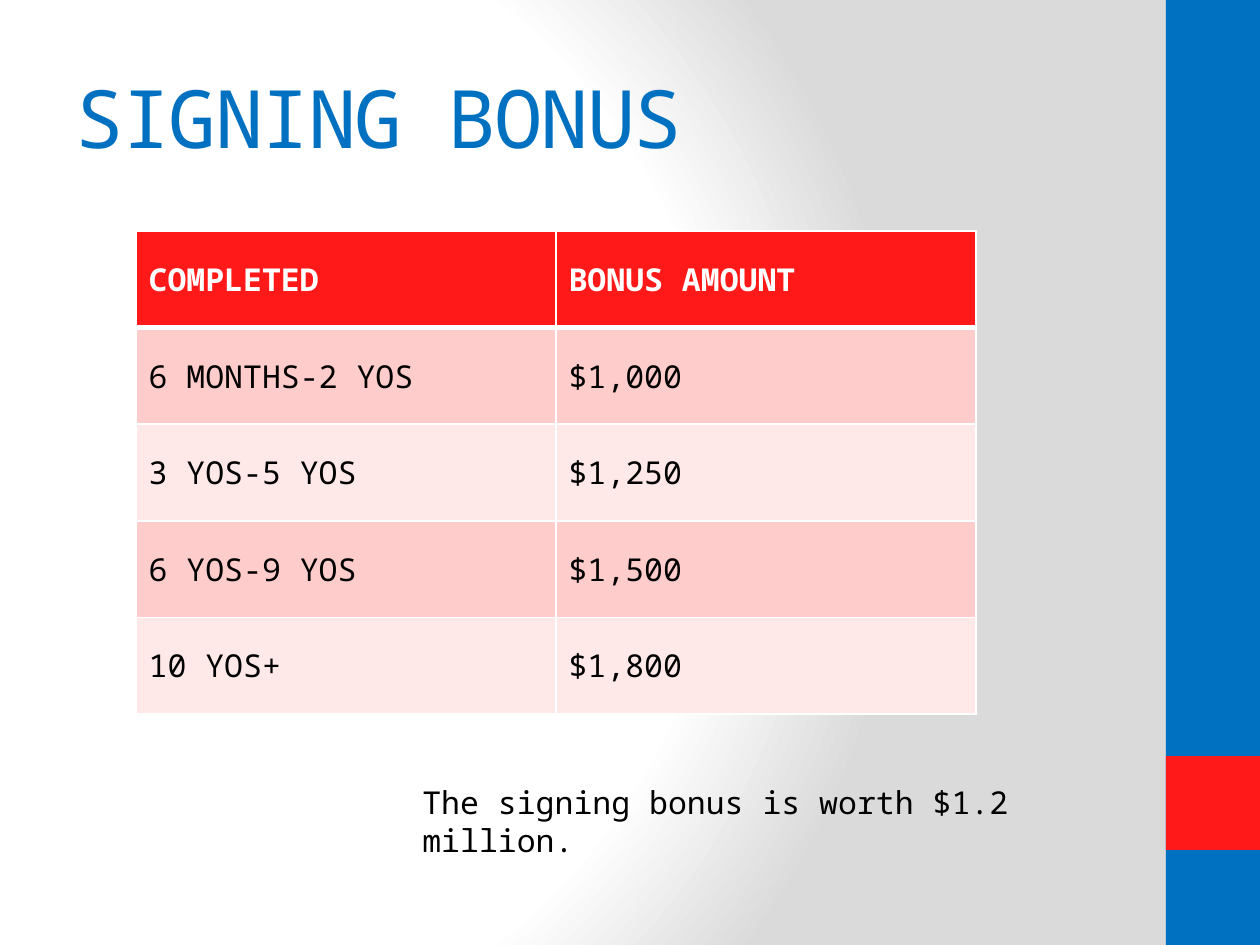
import pptx
import pptx.dml.color
import pptx.enum.shapes
import pptx.enum.text
import pptx.oxml
import pptx.oxml.ns
import pptx.util

PX = 914400 / 126
FONT = "Noto Sans Mono"
BLUE, RED, WHITE, BLACK = "0070C0", "FF1919", "FFFFFF", "000000"
BANDS = ["FFCCCC", "FFE8E8"]
NS = pptx.oxml.ns.nsdecls("a", "p")


def box(*lengths):
    """Turn px lengths into EMU."""
    return [round(n * PX) for n in lengths]


def add_run(p, text, size, color, bold=False):
    r = p.add_run()
    r.text = text
    r.font.name = FONT
    r.font.size = pptx.util.Pt(size)
    r.font.bold = bold
    r.font.color.rgb = pptx.dml.color.RGBColor.from_string(color)
    return r


prs = pptx.Presentation()
prs.slide_width, prs.slide_height = box(1260, 945)
s = prs.slides.add_slide(prs.slide_layouts[5])

# Background: circular gradient from white to grey
stops = "".join(
    f'<a:gs pos="{pos}000"><a:srgbClr val="{color}"/></a:gs>'
    for pos, color in [(0, WHITE), (75, WHITE), (100, "DADADA")]
)
bg = pptx.oxml.parse_xml(
    f'<p:bg {NS}><p:bgPr><a:gradFill rotWithShape="1"><a:gsLst>{stops}</a:gsLst>'
    '<a:path path="circle"><a:fillToRect l="20000" t="50000" r="100000" b="50000"/>'
    "</a:path></a:gradFill><a:effectLst/></p:bgPr></p:bg>"
)
s.element.cSld.insert(0, bg)

# Title
title = s.shapes.title
title.left, title.top, title.width, title.height = box(63, 38, 1050, 157)
tf = title.text_frame
tf.vertical_anchor = pptx.enum.text.MSO_ANCHOR.MIDDLE
p = tf.paragraphs[0]
p.alignment = pptx.enum.text.PP_ALIGN.LEFT
r = add_run(p, "SIGNING BONUS", 46, BLUE)
r.font._element.set("spc", "-100")

# Side bar with accent square
for top, height, color in [(0, 945, BLUE), (756, 94, RED)]:
    sp = s.shapes.add_shape(
        pptx.enum.shapes.MSO_SHAPE.RECTANGLE, *box(1166, top, 94, height)
    )
    sp.shadow.inherit = False
    sp.fill.solid()
    sp.fill.fore_color.rgb = pptx.dml.color.RGBColor.from_string(color)
    sp.line.fill.background()

# Bonus table
rows = [
    ("COMPLETED", "BONUS AMOUNT"),
    ("6 MONTHS-2 YOS", "$1,000"),
    ("3 YOS-5 YOS", "$1,250"),
    ("6 YOS-9 YOS", "$1,500"),
    ("10 YOS+", "$1,800"),
]
table = s.shapes.add_table(len(rows), 2, *box(136, 231, 840, 483)).table
for i, row in enumerate(rows):
    header = i == 0
    for j, text in enumerate(row):
        cell = table.cell(i, j)
        cell.vertical_anchor = pptx.enum.text.MSO_ANCHOR.MIDDLE
        cell.fill.solid()
        cell.fill.fore_color.rgb = pptx.dml.color.RGBColor.from_string(
            RED if header else BANDS[(i - 1) % 2]
        )
        add_run(cell.text_frame.paragraphs[0], text, 18,
                WHITE if header else BLACK, header)
        tcPr = cell._tc.get_or_add_tcPr()
        for k, side in enumerate(["lnL", "lnR", "lnT", "lnB"]):
            thick = (i, side) in [(0, "lnB"), (1, "lnT")]
            width = pptx.util.Pt(3 if thick else 1)
            tcPr.insert(k, pptx.oxml.parse_xml(
                f'<a:{side} {NS} w="{width}"><a:solidFill>'
                f'<a:srgbClr val="{WHITE}"/></a:solidFill></a:{side}>'
            ))

# Total cost note
note = s.shapes.add_textbox(*box(410, 777, 630, 89))
tf = note.text_frame
tf.word_wrap = True
tf.auto_size = pptx.enum.text.MSO_AUTO_SIZE.SHAPE_TO_FIT_TEXT
add_run(tf.paragraphs[0], "The signing bonus is worth $1.2 million.", 18, BLACK)

prs.save("out.pptx")
